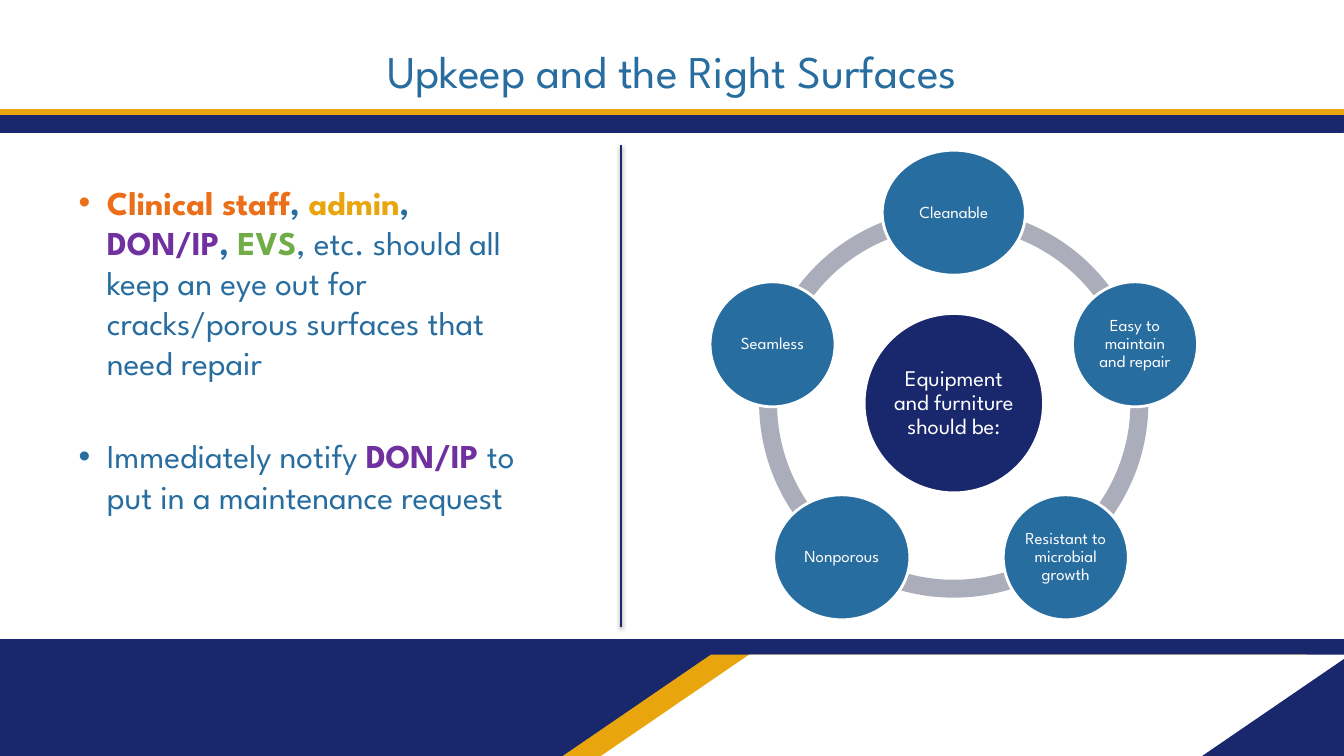
from math import cos, radians, sin

from lxml import etree
from pptx import Presentation
from pptx.dml.color import RGBColor
from pptx.enum.shapes import MSO_CONNECTOR, MSO_SHAPE
from pptx.enum.text import MSO_ANCHOR, MSO_AUTO_SIZE, PP_ALIGN
from pptx.oxml import parse_xml
from pptx.oxml.ns import nsdecls
from pptx.util import Inches, Pt

RECTANGLE = MSO_SHAPE.RECTANGLE
SLANTED = MSO_SHAPE.FLOWCHART_DATA
ELLIPSE = MSO_SHAPE.OVAL
ARC = MSO_SHAPE.BLOCK_ARC
STRAIGHT = MSO_CONNECTOR.STRAIGHT
CENTER = PP_ALIGN.CENTER
MIDDLE = MSO_ANCHOR.MIDDLE
TOP = MSO_ANCHOR.TOP
NO_AUTOFIT = MSO_AUTO_SIZE.NONE

NAVY = RGBColor(0x19, 0x27, 0x6D)
BLUE = RGBColor(0x28, 0x6D, 0xA0)
GOLD = RGBColor(0xE9, 0xA5, 0x0D)
ORANGE = RGBColor(0xEB, 0x6E, 0x19)
PURPLE = RGBColor(0x70, 0x30, 0xA0)
GREEN = RGBColor(0x70, 0xAD, 0x47)
GREY = RGBColor(0xAC, 0xAD, 0xBA)
WHITE = RGBColor(0xFF, 0xFF, 0xFF)

FONT = "League Spartan"
RING_X, RING_Y = 9.46, 4.0
RING_SIZE = 3.86
NODE_RADIUS = 1.89
NODE_HEIGHT = 1.24

# Preset, left, top, width, height, colour, line width
BANDS = [
    (RECTANGLE, 0, 6.34, 13.33, 1.19, NAVY, 0.75),
    (SLANTED, 5.58, 6.51, 7.38, 1.01, GOLD, 2.25),
    (SLANTED, 5.96, 6.51, 7.38, 1.01, WHITE, 2.25),
    (RECTANGLE, 0, 1.14, 13.33, 0.17, NAVY, 0.75),
    (RECTANGLE, 0, 1.09, 13.33, 0.05, GOLD, 0.75),
]

# Space before, then runs of text, colour, bold
BULLETS = [
    (0, [
        ("Clinical staff", ORANGE, True),
        (", ", BLUE, True),
        ("admin", GOLD, True),
        (", ", BLUE, True),
        ("DON/IP", PURPLE, True),
        (", ", BLUE, True),
        ("EVS", GREEN, True),
        (", etc. should all keep an eye out for cracks/porous surfaces "
         "that need repair", BLUE, False),
    ]),
    (38, [
        ("Immediately notify ", BLUE, False),
        ("DON/IP ", PURPLE, True),
        ("to put in a maintenance request", BLUE, False),
    ]),
]

# Clockwise from the top: label, width
QUALITIES = [
    ("Cleanable", 1.42),
    ("Easy to maintain and repair", 1.24),
    ("Resistant to microbial growth", 1.24),
    ("Nonporous", 1.35),
    ("Seamless", 1.24),
]


def add_filled(slide, preset, left, top, width, height, fill,
               outline=None, outline_width=0):
    shape = slide.shapes.add_shape(
        preset, Inches(left), Inches(top), Inches(width), Inches(height))
    shape.shadow.inherit = False
    shape.fill.solid()
    shape.fill.fore_color.rgb = fill
    if outline is None:
        shape.line.fill.background()
    else:
        shape.line.color.rgb = outline
        shape.line.width = Pt(outline_width)
    return shape


def set_font(paragraph, size, color=None):
    paragraph.font.name = FONT
    paragraph.font.size = Pt(size)
    if color is not None:
        paragraph.font.color.rgb = color


def set_frame(frame, anchor, side, vertical):
    frame.word_wrap = True
    frame.auto_size = NO_AUTOFIT
    frame.vertical_anchor = anchor
    frame.margin_left = frame.margin_right = Inches(side)
    frame.margin_top = frame.margin_bottom = Inches(vertical)


def place(shape, left, top, width, height):
    shape.left, shape.top = Inches(left), Inches(top)
    shape.width, shape.height = Inches(width), Inches(height)


def fill_title(title):
    place(title, 0.67, 0.07, 12, 1.25)
    set_frame(title.text_frame, MIDDLE, 0.11, 0.06)
    heading = title.text_frame.paragraphs[0]
    heading.text = "Upkeep and the Right Surfaces"
    heading.alignment = CENTER
    set_font(heading, 32.4, BLUE)


def fill_body(body):
    place(body, 0.67, 1.75, 4.76, 4.95)
    frame = body.text_frame
    set_frame(frame, TOP, 0.11, 0.06)
    for index, (space_before, runs) in enumerate(BULLETS):
        bullet = frame.add_paragraph() if index else frame.paragraphs[0]
        properties = bullet._p.get_or_add_pPr()
        properties.set("marL", str(Inches(0.28)))
        properties.set("indent", str(Inches(-0.28)))
        bullet.space_before = Pt(space_before)
        set_font(bullet, 23.8)
        for text, color, bold in runs:
            run = bullet.add_run()
            run.text = text
            run.font.color.rgb = color
            run.font.bold = bold


def add_divider(slide):
    divider = slide.shapes.add_connector(
        STRAIGHT, Inches(6.16), Inches(1.44), Inches(6.16), Inches(6.22))
    divider.line.color.rgb = NAVY
    divider.line.width = Pt(2)
    effects = parse_xml(f"<a:effectLst {nsdecls('a')}/>")
    shadow = etree.SubElement(
        effects, effects.tag.replace("effectLst", "outerShdw"),
        blurRad=str(Pt(3.1)), dist=str(Pt(1.6)), dir="5400000",
        rotWithShape="0")
    black = etree.SubElement(
        shadow, shadow.tag.replace("outerShdw", "srgbClr"), val="000000")
    etree.SubElement(black, black.tag.replace("srgbClr", "alpha"), val="38000")
    divider._element.spPr.append(effects)


def add_node(slide, label, center_x, center_y, width, height, fill, size):
    node = add_filled(slide, ELLIPSE, center_x - width / 2,
                      center_y - height / 2, width, height, fill, WHITE, 2)
    set_frame(node.text_frame, MIDDLE, 0.02, 0.02)
    paragraph = node.text_frame.paragraphs[0]
    paragraph.text = label
    paragraph.alignment = CENTER
    paragraph.line_spacing = 0.9
    set_font(paragraph, size, WHITE)


def add_ring(slide):
    step = 360 / len(QUALITIES)
    angles = [(270 + step * i) % 360 for i in range(len(QUALITIES))]
    for angle in angles:
        arc = add_filled(slide, ARC, RING_X - RING_SIZE / 2,
                         RING_Y - RING_SIZE / 2, RING_SIZE, RING_SIZE, GREY)
        # One adjustment unit is 100000/60000 of a degree
        arc.adjustments[0] = angle * 0.6
        arc.adjustments[1] = (angle + step) % 360 * 0.6
        arc.adjustments[2] = 0.046
    add_node(slide, "Equipment and furniture should be:",
             RING_X, RING_Y, 1.78, 1.78, NAVY, 16)
    for angle, (label, width) in zip(angles, QUALITIES):
        add_node(slide, label,
                 RING_X + NODE_RADIUS * cos(radians(angle)),
                 RING_Y + NODE_RADIUS * sin(radians(angle)),
                 width, NODE_HEIGHT, BLUE, 12)


def main():
    deck = Presentation()
    deck.slide_width, deck.slide_height = Inches(13.33), Inches(7.5)
    slide = deck.slides.add_slide(deck.slide_layouts[1])
    for preset, left, top, width, height, color, line_width in BANDS:
        add_filled(slide, preset, left, top, width, height,
                   color, color, line_width)
    fill_title(slide.shapes.title)
    fill_body(slide.placeholders[1])
    add_divider(slide)
    add_ring(slide)
    deck.save("out.pptx")


if __name__ == "__main__":
    main()
